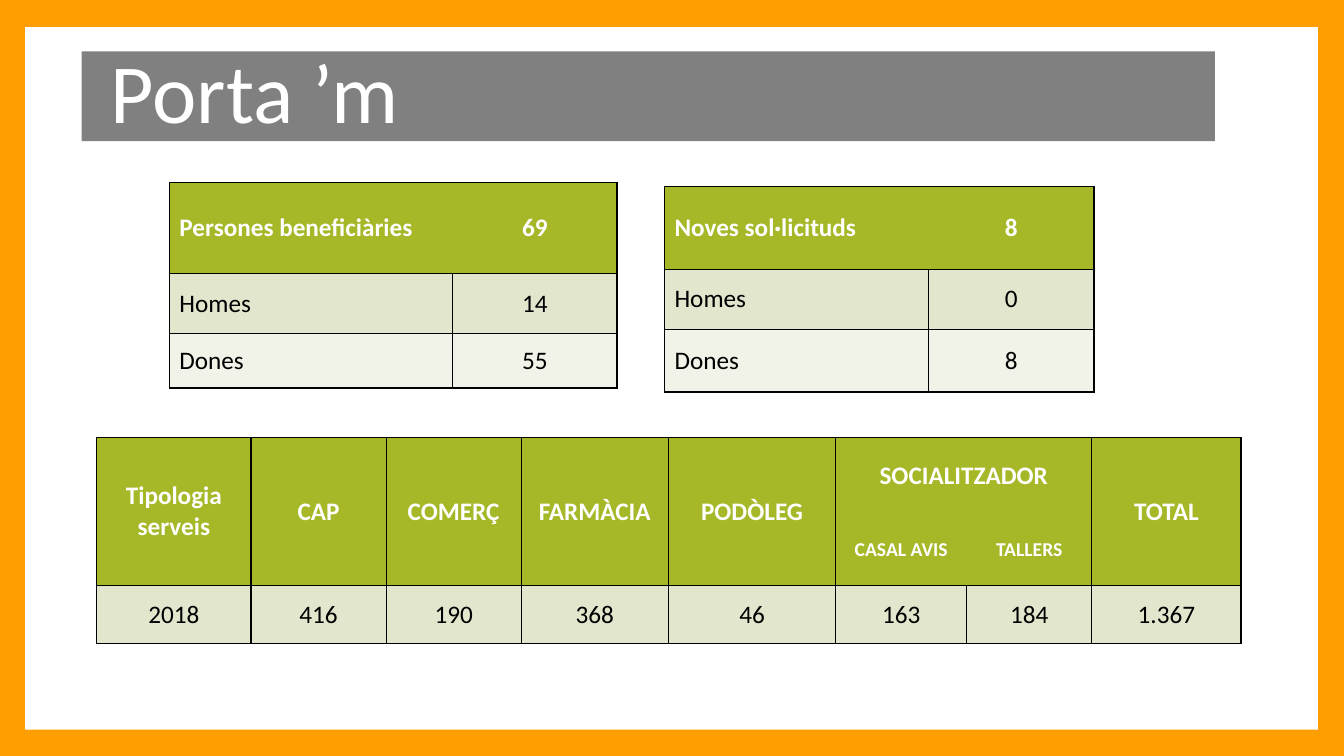
from lxml import etree
from pptx import Presentation
from pptx.dml.color import RGBColor
from pptx.enum.shapes import MSO_SHAPE
from pptx.enum.text import MSO_ANCHOR, MSO_AUTO_SIZE, PP_ALIGN
from pptx.oxml.ns import qn
from pptx.util import Inches, Pt

RECTANGLE = MSO_SHAPE.RECTANGLE
MIDDLE = MSO_ANCHOR.MIDDLE
NO_FIT = MSO_AUTO_SIZE.NONE
LEFT, CENTER = PP_ALIGN.LEFT, PP_ALIGN.CENTER

FONT = "Calibri"
TITLE_ONLY = 5
COLORS = {
    "frame": "FE9E00",
    "paper": "FFFFFF",
    "banner": "808080",
    "header": "A6B727",
    "band": "E1E6CD",
    "pale": "F1F3E8",
    "ink": "000000",
}


def color(name):
    return RGBColor.from_string(COLORS[name])


def paint(fill, name):
    fill.solid()
    fill.fore_color.rgb = color(name)


def format_text(para, size, name, bold=False, align=LEFT):
    para.alignment = align
    for span in para.runs:
        span.font.name = FONT
        span.font.size = Pt(size)
        span.font.bold = bold
        span.font.color.rgb = color(name)


def set_borders(cell, open_sides=""):
    """Draw thin lines on all sides of a cell except the open ones."""
    properties = cell._tc.get_or_add_tcPr()
    for side in "LRTB":
        line = etree.SubElement(properties, qn(f"a:ln{side}"), w=str(Pt(1)))
        if side in open_sides:
            etree.SubElement(line, qn("a:noFill"))
        else:
            fill = etree.SubElement(line, qn("a:solidFill"))
            etree.SubElement(fill, qn("a:srgbClr"), val=COLORS["ink"])


def add_frame(page, left, top, width, height):
    paint(page.background.fill, "frame")
    paper = page.shapes.add_shape(
        RECTANGLE, Inches(left), Inches(top), Inches(width), Inches(height))
    paper.shadow.inherit = False
    paint(paper.fill, "paper")
    paper.line.fill.background()


def add_title(page, text, left, top, width, height):
    title = page.shapes.title
    title.left, title.top = Inches(left), Inches(top)
    title.width, title.height = Inches(width), Inches(height)
    paint(title.fill, "banner")
    frame = title.text_frame
    frame.text = text
    frame.auto_size = NO_FIT
    frame.vertical_anchor = MIDDLE
    frame.margin_left = Inches(0.29)
    para = frame.paragraphs[0]
    para.line_spacing = 0.9
    format_text(para, 60, "paper")


def add_grid(page, left, top, columns, heights, rows, fills, open_sides,
             aligns, small_row=None):
    """Add a bordered table; None in rows marks a cell covered by a merge."""
    table = page.shapes.add_table(
        len(heights), len(columns), Inches(left), Inches(top),
        Inches(sum(columns)), Inches(sum(heights))).table
    table.first_row = table.horz_banding = False
    for column, width in zip(table.columns, columns):
        column.width = Inches(width)
    for r, (height, values, fill) in enumerate(zip(heights, rows, fills)):
        table.rows[r].height = Inches(height)
        is_header = fill == "header"
        for c, value in enumerate(values):
            cell = table.cell(r, c)
            set_borders(cell, open_sides.get((r, c), ""))
            paint(cell.fill, fill)
            cell.vertical_anchor = MIDDLE
            if value is not None:
                cell.text = value
                format_text(cell.text_frame.paragraphs[0],
                            14 if r == small_row else 18,
                            "paper" if is_header else "ink",
                            is_header, aligns[c])
    return table


def add_people_table(page, left, top, columns, heights, rows):
    add_grid(page, left, top, columns, heights, rows,
             ["header", "band", "pale"], {(0, 0): "R", (0, 1): "L"},
             [LEFT, CENTER])


def add_services_table(page, left, top):
    columns = [1.53, 1.34, 1.34, 1.46, 1.66, 1.3, 1.24, 1.48]
    rows = [
        ["Tipologia serveis", "CAP", "COMERÇ", "FARMÀCIA", "PODÒLEG",
         "SOCIALITZADOR", None, "TOTAL"],
        [None] * 5 + ["CASAL AVIS", "TALLERS", None],
        ["2018", "416", "190", "368", "46", "163", "184", "1.367"],
    ]
    open_sides = {(0, 5): "RB", (0, 6): "LB", (1, 5): "RT", (1, 6): "LT"}
    table = add_grid(page, left, top, columns, [0.76, 0.47, 0.57], rows,
                     ["header", "header", "band"], open_sides,
                     [CENTER] * len(columns), small_row=1)
    for c in (0, 1, 2, 3, 4, 7):
        table.cell(0, c).merge(table.cell(1, c))
    table.cell(0, 5).merge(table.cell(0, 6))


def build_page(deck):
    page = deck.slides.add_slide(deck.slide_layouts[TITLE_ONLY])
    add_frame(page, 0.25, 0.27, 12.82, 6.97)
    # The title placeholder comes first, so it is raised above the paper.
    page.shapes._spTree.append(page.shapes.title._element)
    add_title(page, "Porta ’m", 0.81, 0.51, 11.24, 0.89)
    add_people_table(page, 1.68, 1.81, [2.81, 1.63], [0.9, 0.6, 0.54],
                     [["Persones beneficiàries", "69"],
                      ["Homes", "14"], ["Dones", "55"]])
    add_people_table(page, 6.59, 1.85, [2.62, 1.64], [0.82, 0.6, 0.62],
                     [["Noves sol·licituds", "8"],
                      ["Homes", "0"], ["Dones", "8"]])
    add_services_table(page, 0.96, 4.34)


def main():
    deck = Presentation()
    deck.slide_width, deck.slide_height = Inches(13.33), Inches(7.5)
    build_page(deck)
    deck.save("out.pptx")


if __name__ == "__main__":
    main()
